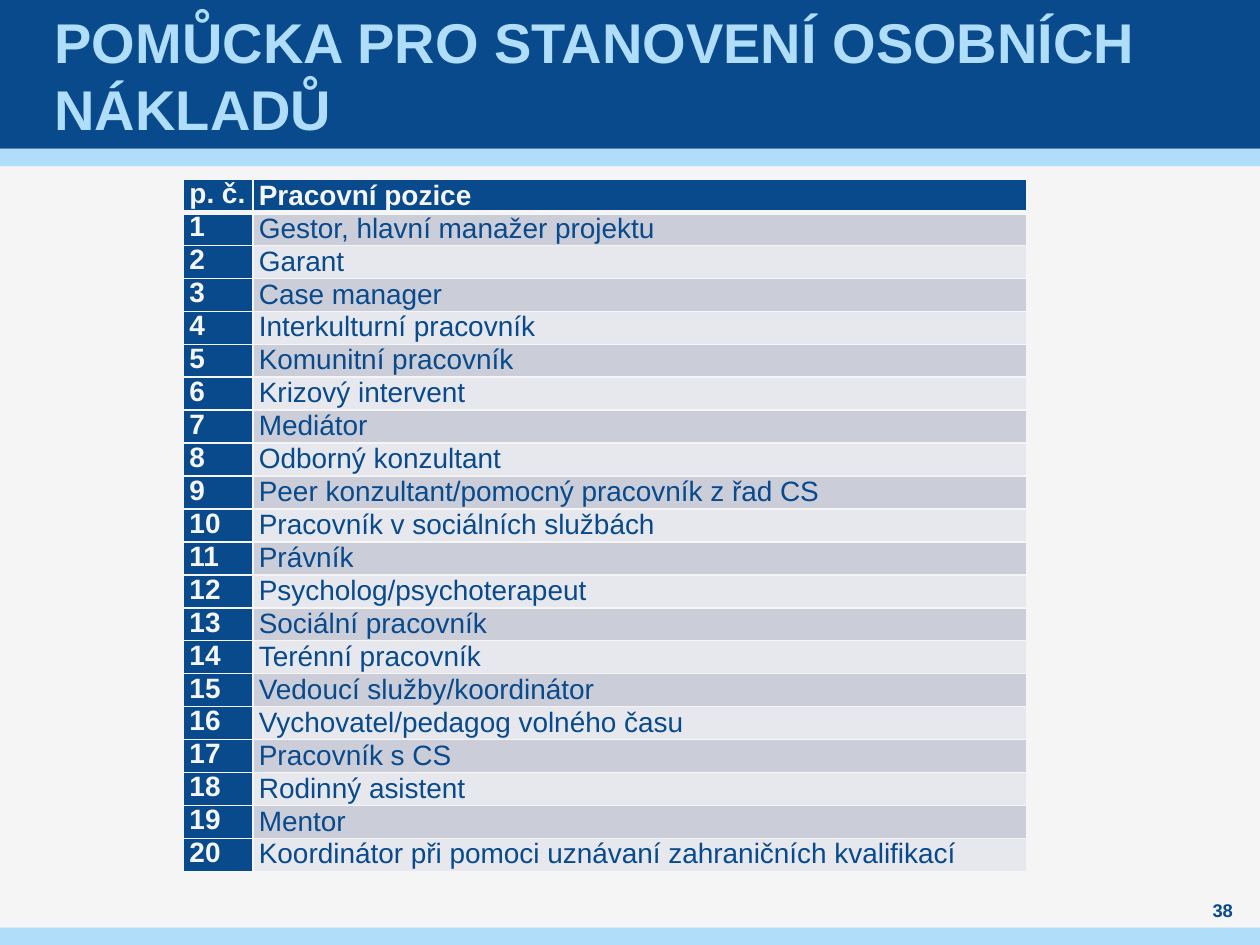
from lxml.etree import SubElement
from pptx import Presentation
from pptx.dml.color import RGBColor
from pptx.enum.shapes import MSO_SHAPE
from pptx.enum.text import MSO_ANCHOR, PP_ALIGN
from pptx.oxml.ns import qn
from pptx.util import Cm, Pt

NAVY, SKY, PALE = "084A8B", "AFDDFA", "F5F5F5"
BANDS = ["CBCDD9", "E7E8ED"]
WIDTH, HEIGHT = 25.4, 19.05
JOBS = [
    "Gestor, hlavní manažer projektu",
    "Garant",
    "Case manager",
    "Interkulturní pracovník",
    "Komunitní pracovník",
    "Krizový intervent",
    "Mediátor",
    "Odborný konzultant",
    "Peer konzultant/pomocný pracovník z řad CS",
    "Pracovník v sociálních službách",
    "Právník",
    "Psycholog/psychoterapeut",
    "Sociální pracovník",
    "Terénní pracovník",
    "Vedoucí služby/koordinátor",
    "Vychovatel/pedagog volného času",
    "Pracovník s CS",
    "Rodinný asistent",
    "Mentor",
    "Koordinátor při pomoci uznávaní zahraničních kvalifikací",
]


def paint(target, color):
    target.solid()
    target.fore_color.rgb = RGBColor.from_string(color)


def style(para, size, color, bold):
    for run in para.runs:
        font = run.font
        font.name, font.size, font.bold = "Arial", Pt(size), bold
        font.color.rgb = RGBColor.from_string(color)


def add_bar(slide, top, height, color):
    bar = slide.shapes.add_shape(MSO_SHAPE.RECTANGLE, 0, Cm(top), Cm(WIDTH), Cm(height))
    bar.shadow.inherit = False
    paint(bar.fill, color)
    bar.line.fill.background()


def add_label(slide, box, text, size, color, align, inset=0):
    frame = slide.shapes.add_textbox(*map(Cm, box)).text_frame
    frame.word_wrap = True
    frame.vertical_anchor = MSO_ANCHOR.MIDDLE
    frame.margin_left = frame.margin_right = Cm(inset)
    frame.margin_top = frame.margin_bottom = 0
    frame.text = text
    para = frame.paragraphs[0]
    para.alignment = align
    style(para, size, color, True)


def add_header(slide, left, top, width, height):
    add_bar(slide, top + height, 0.35, SKY)
    add_bar(slide, top, height, NAVY)
    add_label(slide, (left + 1, top, width - 2, height),
              "POMŮCKA PRO STANOVENÍ OSOBNÍCH NÁKLADŮ", 32, SKY, PP_ALIGN.LEFT, 0.1)


def add_footer(slide, left, top, width, height):
    add_bar(slide, top, height, SKY)
    add_label(slide, (left + width - 1.4, top - 0.6, 1.3, 0.5),
              "38", 10.5, NAVY, PP_ALIGN.CENTER)


def add_edges(cell, widths):
    """Draw the cell borders; they must come before the fill in the XML."""
    props = cell._tc.get_or_add_tcPr()
    for side, width in zip("LRTB", widths):
        line = SubElement(props, qn(f"a:ln{side}"), w=str(Pt(width)))
        fill = SubElement(line, qn("a:solidFill"))
        SubElement(fill, qn("a:srgbClr"), val=PALE)


def fill_cell(cell, row, col, text):
    head = row == 0
    solid = head or col == 0
    add_edges(cell, (1, 1, 3 if row == 1 else 1, 3 if head else 1))
    paint(cell.fill, NAVY if solid else BANDS[(row - 1) % 2])
    cell.margin_left = cell.margin_right = Cm(0.12)
    cell.margin_top = cell.margin_bottom = 0
    cell.vertical_anchor = MSO_ANCHOR.MIDDLE if col else MSO_ANCHOR.TOP
    cell.text_frame.text = text
    para = cell.text_frame.paragraphs[0]
    para.alignment = PP_ALIGN.JUSTIFY if head else PP_ALIGN.LEFT
    para.line_spacing = 0.98
    para.space_after = Pt(8)
    style(para, 16, PALE if solid else NAVY, solid)


def add_jobs(slide, left, top, width, row_height):
    rows = [("p. č.", "Pracovní pozice")]
    rows += [(str(num), job) for num, job in enumerate(JOBS, 1)]
    table = slide.shapes.add_table(len(rows), 2, Cm(left), Cm(top),
                                   Cm(width), Cm(row_height * len(rows))).table
    table.columns[0].width = Cm(1.4)
    table.columns[1].width = Cm(width - 1.4)
    for row, texts in enumerate(rows):
        for col, text in enumerate(texts):
            fill_cell(table.cell(row, col), row, col, text)


def main():
    deck = Presentation()
    deck.slide_width, deck.slide_height = Cm(WIDTH), Cm(HEIGHT)
    slide = deck.slides.add_slide(deck.slide_layouts[6])
    paint(slide.background.fill, PALE)
    add_header(slide, 0, 0, WIDTH, 3)
    add_jobs(slide, 3.7, 3.62, 17, 0.66)
    add_footer(slide, 0, HEIGHT - 0.35, WIDTH, 0.35)
    deck.save("out.pptx")


if __name__ == "__main__":
    main()
